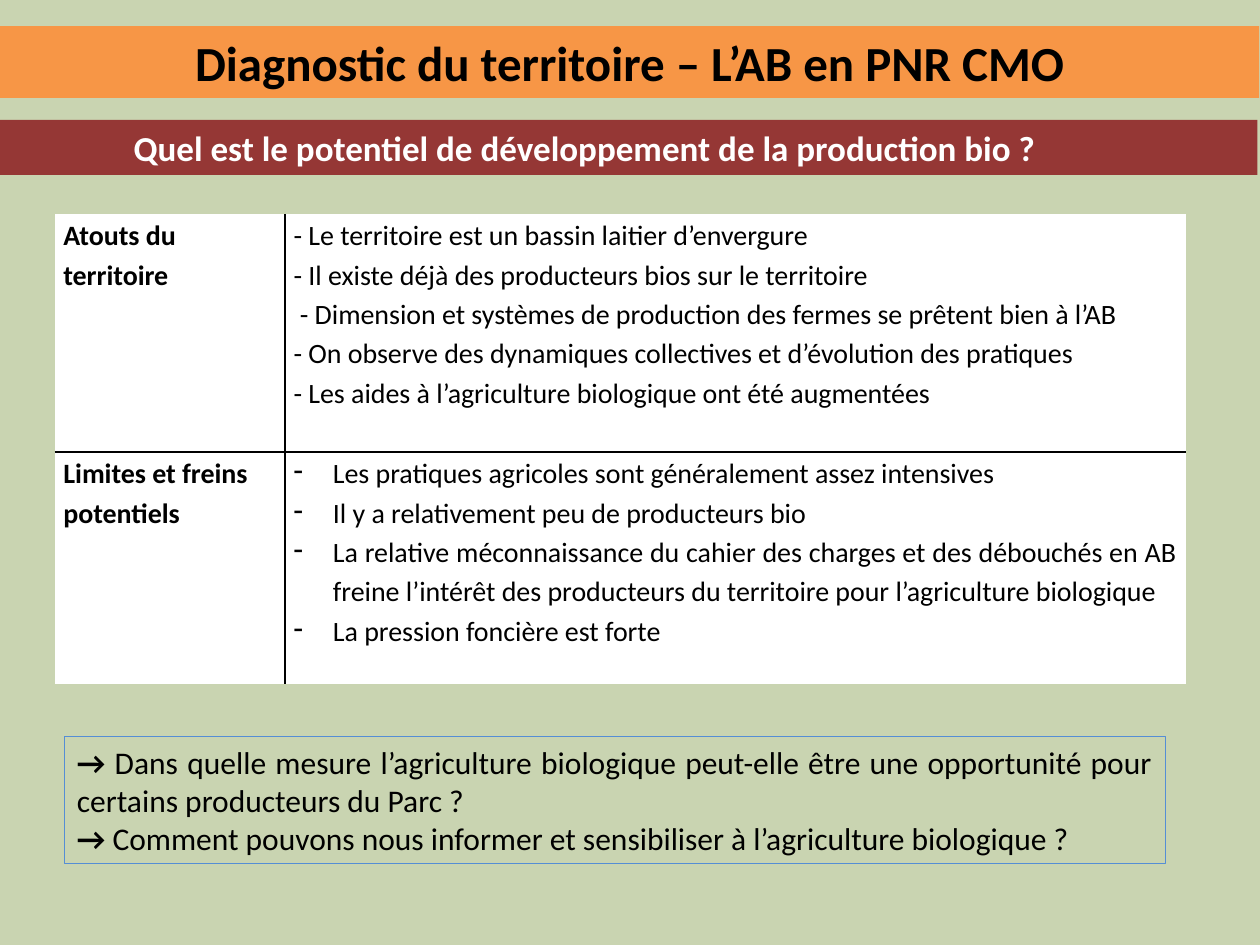
from lxml import etree
from pptx import Presentation
from pptx.dml.color import RGBColor
from pptx.enum.shapes import MSO_SHAPE
from pptx.enum.text import MSO_ANCHOR, MSO_AUTO_SIZE, PP_ALIGN
from pptx.oxml.ns import qn
from pptx.util import Pt

RECTANGLE = MSO_SHAPE.RECTANGLE
MIDDLE, TOP = MSO_ANCHOR.MIDDLE, MSO_ANCHOR.TOP
CENTER, JUSTIFY, LEFT = PP_ALIGN.CENTER, PP_ALIGN.JUSTIFY, PP_ALIGN.LEFT
NO_AUTOFIT = MSO_AUTO_SIZE.NONE

COLORS = {
    "background": "C9D4B1",
    "title_band": "F79646",
    "question_band": "953735",
    "box_line": "558ED5",
    "black": "000000",
    "white": "FFFFFF",
}
FONT = "Calibri"
PLAIN_TABLE_STYLE = "{2D5ABB26-0587-4C30-8999-92F81FD0307C}"
HANGING = 22.5

STRENGTHS = [
    "- Le territoire est un bassin laitier d’envergure",
    "- Il existe déjà des producteurs bios sur le territoire",
    " - Dimension et systèmes de production des fermes se prêtent bien à l’AB",
    "- On observe des dynamiques collectives et d’évolution des pratiques",
    "- Les aides à l’agriculture biologique ont été augmentées",
]
LIMITS = [
    "Les pratiques agricoles sont généralement assez intensives",
    "Il y a relativement peu de producteurs bio",
    "La relative méconnaissance du cahier des charges et des débouchés en AB "
    "freine l’intérêt des producteurs du territoire pour l’agriculture biologique",
    "La pression foncière est forte",
]
QUESTIONS = [
    "Dans quelle mesure l’agriculture biologique peut-elle être une opportunité "
    "pour certains producteurs du Parc ?",
    "Comment pouvons nous informer et sensibiliser à l’agriculture biologique ?",
]


def rgb(name):
    """Return the named colour."""
    return RGBColor.from_string(COLORS[name])


def apply(target, values):
    """Set each attribute in values on the target."""
    for attribute, value in values.items():
        setattr(target, attribute, value)


def paint(owner, color):
    """Give a shape, cell or background a solid fill."""
    owner.fill.solid()
    owner.fill.fore_color.rgb = rgb(color)


def place(element, left, top, width, height):
    """Position an element, with lengths in points."""
    apply(element, {"left": Pt(left), "top": Pt(top), "width": Pt(width), "height": Pt(height)})


def add_run(paragraph, text, size, bold=False, color="black"):
    """Add a formatted run to a paragraph."""
    run = paragraph.add_run()
    run.text = text
    apply(run.font, {"name": FONT, "size": Pt(size), "bold": bold})
    run.font.color.rgb = rgb(color)


def set_bullet(paragraph, character=None, indent=0):
    """Give a paragraph a hanging bullet, or none."""
    properties = paragraph._p.get_or_add_pPr()
    properties.set("marL", str(Pt(indent)))
    properties.set("indent", str(-Pt(indent)))
    if character:
        etree.SubElement(properties, qn("a:buChar")).set("char", character)
    else:
        etree.SubElement(properties, qn("a:buNone"))


def next_paragraph(frame, index):
    """Return the first paragraph of a frame or add another."""
    return frame.add_paragraph() if index else frame.paragraphs[0]


def fill_band(band, text, size, text_color, fill):
    """Turn a shape into a coloured band with a bold centred heading."""
    paint(band, fill)
    frame = band.text_frame
    apply(frame, {"word_wrap": True, "auto_size": NO_AUTOFIT, "vertical_anchor": MIDDLE})
    frame.paragraphs[0].alignment = CENTER
    add_run(frame.paragraphs[0], text, size, True, text_color)


def add_question_band(slide):
    """Add the question band, its text shifted left of centre."""
    band = slide.shapes.add_shape(RECTANGLE, Pt(-0.5), Pt(68.5), Pt(719), Pt(31.5))
    band.shadow.inherit = False
    band.line.fill.background()
    fill_band(band, "Quel est le potentiel de développement de la production bio ?",
              20, "white", "question_band")
    band.text_frame.margin_right = Pt(57)


def set_borders(cell, sides):
    """Draw one-point black borders on the given sides of a cell."""
    properties = cell._tc.get_or_add_tcPr()
    for side in sides:
        border = etree.SubElement(properties, qn(f"a:ln{side}"), w=str(Pt(1)))
        ink = etree.SubElement(border, qn("a:solidFill"))
        etree.SubElement(ink, qn("a:srgbClr"), val=COLORS["black"])


def fill_cell(cell, lines, borders, bold=False, bullet=None):
    """Write the lines of a white table cell."""
    set_borders(cell, borders)
    paint(cell, "white")
    apply(cell, {"margin_left": Pt(5), "margin_right": Pt(5), "margin_top": 0,
                 "margin_bottom": 0, "vertical_anchor": TOP})
    for index, line in enumerate(lines):
        paragraph = next_paragraph(cell.text_frame, index)
        apply(paragraph, {"alignment": LEFT if bold else JUSTIFY, "line_spacing": 1.15})
        if bullet:
            set_bullet(paragraph, bullet, HANGING)
        add_run(paragraph, line, 16, bold)


def add_assessment_table(slide):
    """Add the table of strengths and limits."""
    frame = slide.shapes.add_table(2, 2, Pt(31.25), Pt(122.25), Pt(646.5), Pt(268.5))
    table = frame.table
    apply(table, {"first_row": False, "horz_banding": False})
    table._tbl.tblPr.find(qn("a:tableStyleId")).text = PLAIN_TABLE_STYLE
    for column, width in zip(table.columns, (131.5, 515)):
        column.width = Pt(width)
    for row, height in zip(table.rows, (136, 132.5)):
        row.height = Pt(height)
    fill_cell(table.cell(0, 0), ["Atouts du territoire"], "RB", bold=True)
    fill_cell(table.cell(0, 1), STRENGTHS, "LB")
    fill_cell(table.cell(1, 0), ["Limites et freins potentiels"], "RT", bold=True)
    fill_cell(table.cell(1, 1), LIMITS, "LT", bullet="-")


def fill_questions(box):
    """Write the closing questions in an outlined box."""
    place(box, 36.75, 421, 629.25, 72.5)
    box.line.color.rgb = rgb("box_line")
    box.line.width = Pt(0.75)
    apply(box.text_frame, {"word_wrap": True, "auto_size": NO_AUTOFIT, "vertical_anchor": TOP})
    for index, question in enumerate(QUESTIONS):
        paragraph = next_paragraph(box.text_frame, index)
        apply(paragraph, {"alignment": JUSTIFY, "line_spacing": 1.0, "space_before": Pt(0)})
        set_bullet(paragraph)
        add_run(paragraph, "→ ", 18, True)
        add_run(paragraph, question, 18)


def main():
    """Build and save the slide."""
    deck = Presentation()
    apply(deck, {"slide_width": Pt(720), "slide_height": Pt(540)})
    slide = deck.slides.add_slide(deck.slide_layouts[1])
    paint(slide.background, "background")
    title = slide.shapes.title
    place(title, 0, 15, 719.5, 41)
    fill_band(title, "Diagnostic du territoire – L’AB en PNR CMO", 28, "black", "title_band")
    add_question_band(slide)
    add_assessment_table(slide)
    fill_questions(slide.placeholders[1])
    deck.save("out.pptx")


if __name__ == "__main__":
    main()
